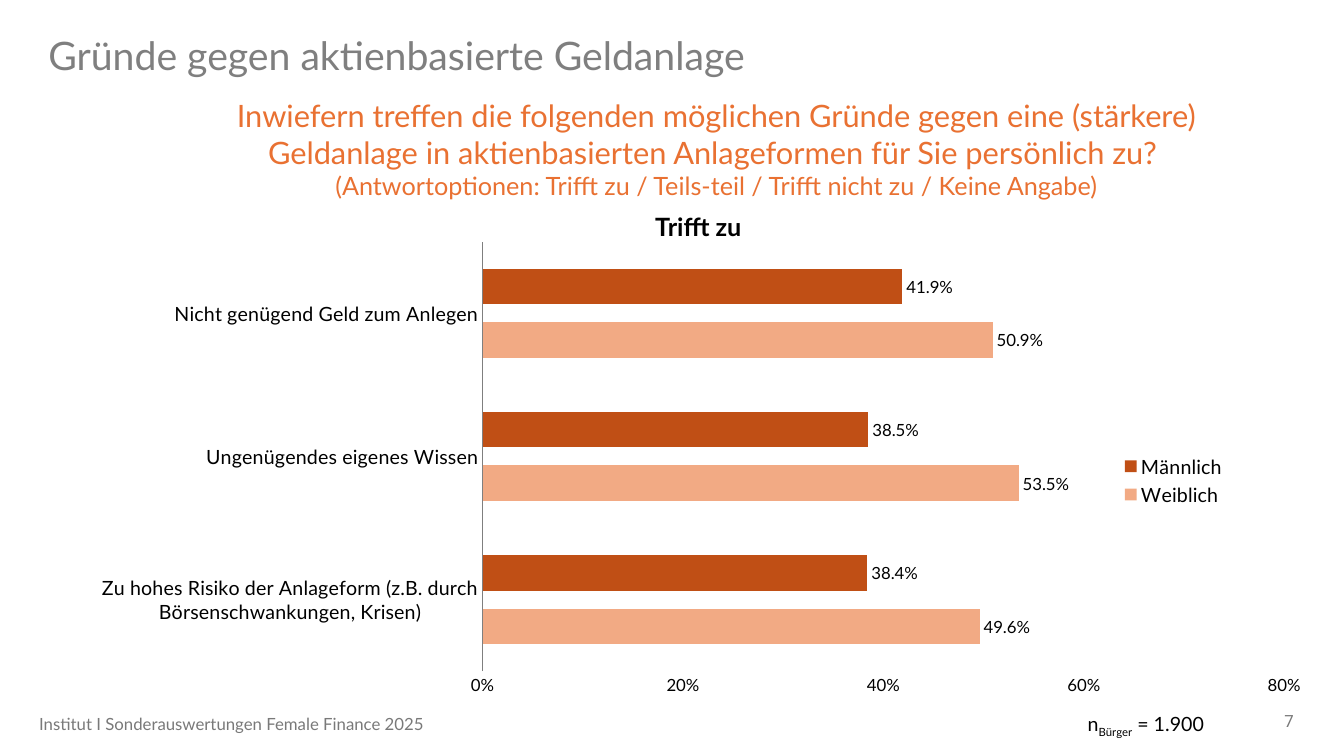
from pptx import Presentation
from pptx.chart.data import CategoryChartData
from pptx.dml.color import RGBColor
from pptx.enum.chart import XL_CHART_TYPE as CT, XL_LABEL_POSITION as LP
from pptx.enum.chart import XL_LEGEND_POSITION as LEG, XL_TICK_MARK as TM
from pptx.enum.text import MSO_ANCHOR as ANC, PP_ALIGN as AL
from pptx.oxml import parse_xml
from pptx.oxml.ns import nsdecls
from pptx.util import Inches, Pt

BLACK = RGBColor(0x00, 0x00, 0x00)
TITLE_GREY = RGBColor(0x7F, 0x7F, 0x7F)
FOOT_GREY = RGBColor(0x79, 0x79, 0x79)
ORANGE = RGBColor(0xE9, 0x71, 0x32)
SERIES = [
    ("Weiblich", (0.496, 0.535, 0.509), RGBColor(0xF2, 0xAA, 0x84)),
    ("Männlich", (0.384, 0.385, 0.419), RGBColor(0xC0, 0x4F, 0x15)),
]


def add_text(sp, box, paras, align=AL.LEFT, anchor=ANC.TOP):
    sp.left, sp.top, sp.width, sp.height = [Inches(v) for v in box]
    tf = sp.text_frame
    tf.word_wrap = True
    tf.vertical_anchor = anchor
    for i, runs in enumerate(paras):
        p = tf.add_paragraph() if i else tf.paragraphs[0]
        p.alignment = align
        for text, size, color, font in runs:
            r = p.add_run()
            r.text = text
            r.font.size = Pt(size)
            r.font.name = font
            r.font.color.rgb = color
    return tf


def set_layout(parent, index, x, y, size="", target=""):
    parent.insert(index, parse_xml(
        f'<c:layout {nsdecls("c")}><c:manualLayout>{target}'
        '<c:xMode val="edge"/><c:yMode val="edge"/>'
        f'<c:x val="{x}"/><c:y val="{y}"/>{size}</c:manualLayout></c:layout>'))


prs = Presentation()
prs.slide_width, prs.slide_height = Inches(13.33), Inches(7.5)
s = prs.slides.add_slide(prs.slide_layouts[5])

data = CategoryChartData(number_format="0.0%")
data.categories = [
    "Zu hohes Risiko der Anlageform (z.B. durch Börsenschwankungen, Krisen)",
    "Ungenügendes eigenes Wissen",
    "Nicht genügend Geld zum Anlegen",
]
for name, values, color in SERIES:
    data.add_series(name, values)
box = [Inches(v) for v in (0.35, 2.19, 12.64, 4.95)]
chart = s.shapes.add_chart(CT.BAR_CLUSTERED, *box, data).chart
chart.has_title = False
chart.font.name = "Lato"
chart.font.size = Pt(12)
chart.font.color.rgb = BLACK

plot = chart.plots[0]
plot.gap_width = 150
plot.overlap = -50
plot.vary_by_categories = False
for series, (name, values, color) in zip(plot.series, SERIES):
    series.format.fill.solid()
    series.format.fill.fore_color.rgb = color
    labels = series.data_labels
    labels.show_value = True
    labels.number_format = "0.0%"
    labels.number_format_is_linked = False
    labels.position = LP.OUTSIDE_END

cat = chart.category_axis
cat.major_tick_mark = TM.NONE
cat.tick_labels.font.size = Pt(14)
cat.format.line.color.rgb = TITLE_GREY
cat.format.line.width = Pt(0.75)

val = chart.value_axis
val.minimum_scale, val.maximum_scale, val.major_unit = 0, 0.8, 0.2
val.has_major_gridlines = False
val.major_tick_mark = TM.NONE
val.format.line.fill.background()
val.tick_labels.number_format = "0%"
val.tick_labels.number_format_is_linked = False

chart.has_legend = True
legend = chart.legend
legend.position = LEG.RIGHT
legend.include_in_layout = False
legend.font.size = Pt(14)
set_layout(legend._element, 1, 0.85, 0.46)

area = chart._chartSpace.chart.plotArea
for old in area.findall("{*}layout"):
    area.remove(old)
set_layout(area, 0, 0.351, 0.042, '<c:w val="0.629"/><c:h val="0.861"/>',
           '<c:layoutTarget val="inner"/>')

tf = add_text(s.shapes.title, (0.38, 0.31, 11.17, 0.53),
              [[("Gründe gegen aktienbasierte Geldanlage", 28, TITLE_GREY, "Lato")]])
tf.paragraphs[0].line_spacing = 0.9

texts = [
    ((10.17, 7.01, 1.87, 0.34),
     [[("n", 14, BLACK, "Lato"), ("Bürger", 14, BLACK, "Lato"),
       (" = 1.900", 14, BLACK, "Lato")]], AL.RIGHT, ANC.TOP),
    ((6.4, 2.05, 1.41, 0.4),
     [[("Trifft zu", 18, BLACK, "Lato")]], AL.LEFT, ANC.TOP),
    ((1.57, 0.91, 11.07, 1.14),
     [[("Inwiefern treffen die folgenden möglichen Gründe gegen eine (stärkere) "
        "Geldanlage in aktienbasierten Anlageformen für Sie persönlich zu? ",
        22, ORANGE, "Lato")],
      [("(Antwortoptionen: Trifft zu / Teils-teil / Trifft nicht zu / Keine Angabe)",
        18, ORANGE, "Lato")]], AL.CENTER, ANC.TOP),
    ((9.93, 6.95, 3, 0.4),
     [[("7", 12, FOOT_GREY, "Roboto")]], AL.RIGHT, ANC.MIDDLE),
    ((0.29, 6.98, 6.7, 0.4),
     [[("Institut I Sonderauswertungen Female Finance 2025", 12, FOOT_GREY, "Lato")]],
     AL.LEFT, ANC.MIDDLE),
]
frames = [add_text(s.shapes.add_textbox(0, 0, 0, 0), *text) for text in texts]
sample, heading, question = frames[:3]
sample.paragraphs[0].runs[1].font._element.set("baseline", "-25000")
heading.paragraphs[0].runs[0].font.bold = True
question.margin_left = question.margin_right = Inches(0.3)

prs.save("out.pptx")
